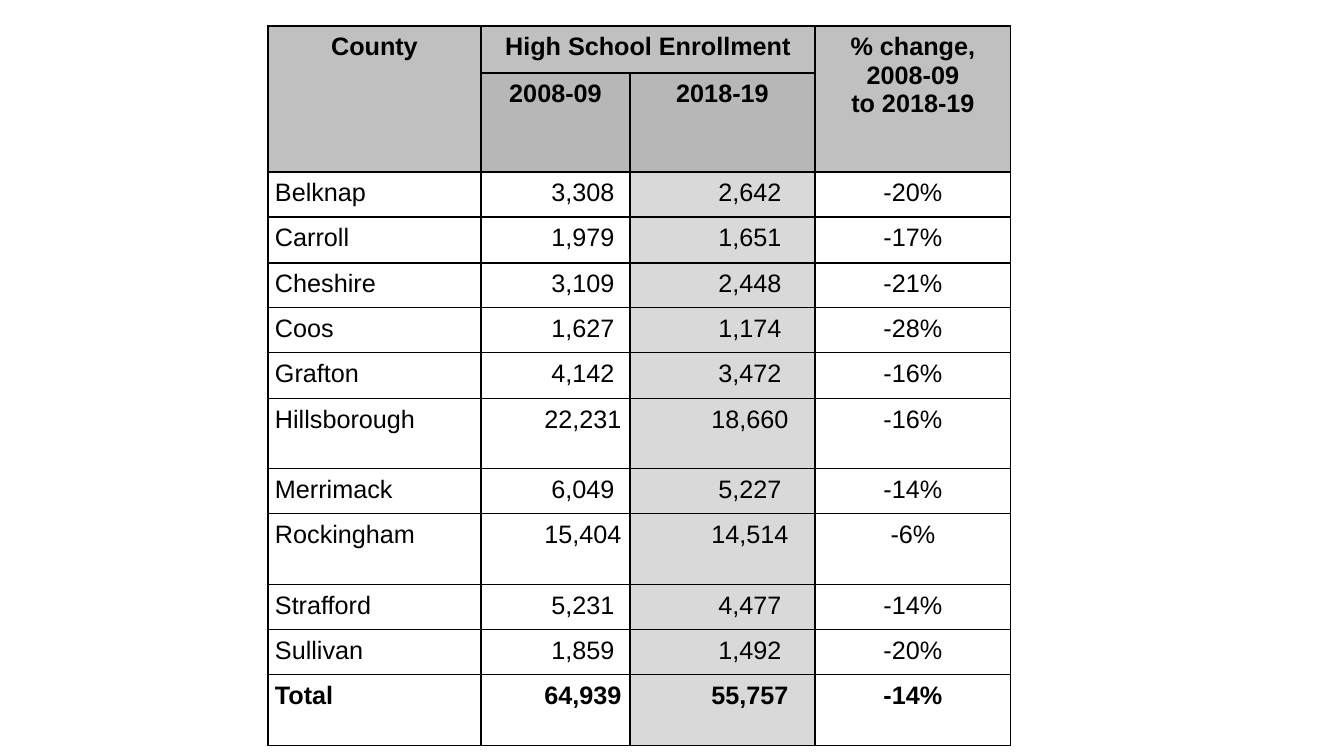
from dataclasses import dataclass
from itertools import pairwise

from lxml import etree
from pptx import Presentation, util as u
from pptx.dml.color import RGBColor
from pptx.enum import text
from pptx.oxml.ns import qn

PX = 914400 / 100.8


@dataclass(frozen=True)
class Theme:
    font: str = "Arial"
    size: int = 18
    ink: str = "000000"
    header: str = "C0C0C0"
    subheader: str = "B7B7B7"
    latest_year: str = "D9D9D9"
    border_points: int = 1


THEME = Theme()
INSET = 7
NUMBER_INSET = 62
COLUMN_EDGES = [0, 213, 362, 547, 743]
ROW_EDGES = [0, 47, 146, 191, 237, 282, 327, 373, 443, 488, 559, 604, 649, 720]

HEADERS = [
    ["County", "High School Enrollment", "", "% change, 2008-09\nto 2018-19"],
    ["", "2008-09", "2018-19", ""],
]
COUNTIES = [
    ["Belknap", "3,308", "2,642", "-20%"],
    ["Carroll", "1,979", "1,651", "-17%"],
    ["Cheshire", "3,109", "2,448", "-21%"],
    ["Coos", "1,627", "1,174", "-28%"],
    ["Grafton", "4,142", "3,472", "-16%"],
    ["Hillsborough", "22,231", "18,660", "-16%"],
    ["Merrimack", "6,049", "5,227", "-14%"],
    ["Rockingham", "15,404", "14,514", "-6%"],
    ["Strafford", "5,231", "4,477", "-14%"],
    ["Sullivan", "1,859", "1,492", "-20%"],
    ["Total", "64,939", "55,757", "-14%"],
]


def px(length):
    return u.Emu(round(length * PX))


def set_format(target, values):
    for name, value in values.items():
        setattr(target, name, value)


def add_borders(cell):
    properties = cell._tc.get_or_add_tcPr()
    for side in ("lnL", "lnR", "lnT", "lnB"):
        line = etree.SubElement(properties, qn(f"a:{side}"),
                                w=str(u.Pt(THEME.border_points)))
        fill = etree.SubElement(line, qn("a:solidFill"))
        etree.SubElement(fill, qn("a:srgbClr"), val=THEME.ink)


def fill_cell(cell, color):
    if color:
        cell.fill.solid()
        cell.fill.fore_color.rgb = RGBColor.from_string(color)
    else:
        cell.fill.background()


def write_cell(cell, content, bold, alignment, left_inset):
    set_format(cell, {
        "margin_left": px(left_inset), "margin_right": px(INSET),
        "margin_top": px(INSET), "margin_bottom": px(INSET),
        "vertical_anchor": text.MSO_ANCHOR.TOP,
    })
    cell.text = content
    for paragraph in cell.text_frame.paragraphs:
        paragraph.alignment = alignment
        set_format(paragraph.font, {
            "name": THEME.font, "size": u.Pt(THEME.size), "bold": bold})
        paragraph.font.color.rgb = RGBColor.from_string(THEME.ink)


def cell_color(row, column):
    if row < len(HEADERS):
        return THEME.subheader if row == 1 and column in (1, 2) else THEME.header
    return THEME.latest_year if column == 2 else None


def add_enrollment_table(slide, left, top, width, height):
    rows = HEADERS + COUNTIES
    table = slide.shapes.add_table(
        len(rows), len(rows[0]), px(left), px(top), px(width), px(height)).table
    set_format(table, {"first_row": False, "horz_banding": False})

    # Column widths and row heights
    for column, (start, end) in zip(table.columns, pairwise(COLUMN_EDGES)):
        column.width = px(end - start)
    for row, (start, end) in zip(table.rows, pairwise(ROW_EDGES)):
        row.height = px(end - start)

    # Header cells that span two rows or columns
    for first, last in (((0, 0), (1, 0)), ((0, 1), (0, 2)), ((0, 3), (1, 3))):
        table.cell(*first).merge(table.cell(*last))

    # Text, borders and fills
    for row, values in enumerate(rows):
        is_header = row < len(HEADERS)
        for column, content in enumerate(values):
            cell = table.cell(row, column)
            add_borders(cell)
            fill_cell(cell, cell_color(row, column))
            is_name = column == 0 and not is_header
            is_number = column in (1, 2) and not is_header
            write_cell(
                cell, content,
                bold=is_header or values[0] == "Total",
                alignment=text.PP_ALIGN.LEFT if is_name else text.PP_ALIGN.CENTER,
                left_inset=NUMBER_INSET if is_number else INSET)


def main():
    presentation = Presentation()
    set_format(presentation, {"slide_width": px(1344), "slide_height": px(756)})
    slide = presentation.slides.add_slide(presentation.slide_layouts[6])
    add_enrollment_table(slide, 268, 26, COLUMN_EDGES[-1], ROW_EDGES[-1])
    presentation.save("out.pptx")


if __name__ == "__main__":
    main()
